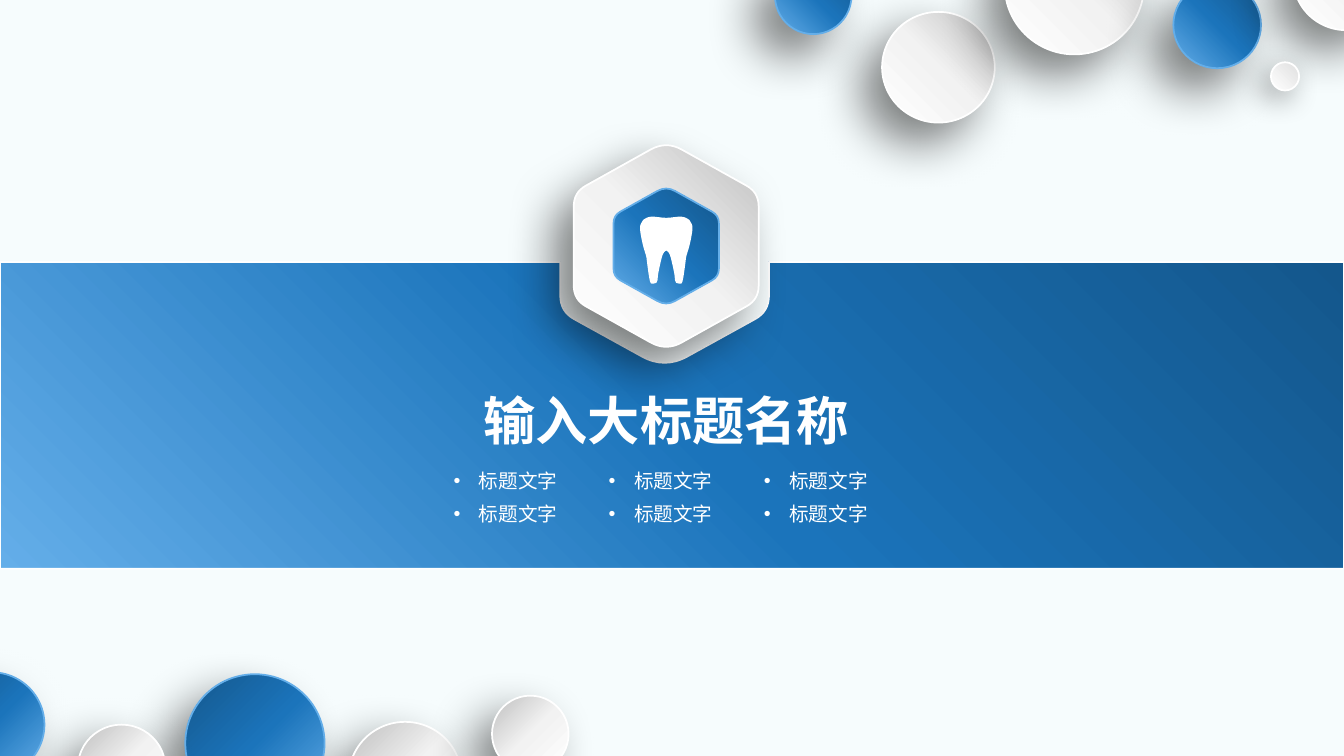
from dataclasses import dataclass
from itertools import product
from typing import Optional

from lxml import etree
from pptx import Presentation
from pptx import util as u
from pptx.dml.color import RGBColor
from pptx.enum import shapes, text
from pptx.oxml.ns import qn

WHITE = RGBColor(0xFF, 0xFF, 0xFF)
PALE = RGBColor(0xF2, 0xF2, 0xF2)
SILVER = RGBColor(0xE0, 0xE0, 0xE0)
GREY = RGBColor(0xBF, 0xBF, 0xBF)
SKY = RGBColor(0x64, 0xAE, 0xE9)
BLUE = RGBColor(0x1B, 0x74, 0xBB)
NAVY = RGBColor(0x14, 0x57, 0x8C)
AQUA = RGBColor(0x23, 0xB9, 0xD6)
BLACK = RGBColor(0, 0, 0)
FONT = "Arial"
WIDTH, HEIGHT = 33.87, 19.05
CENTRE_X, CENTRE_Y = 16.79, 6.2

Point = tuple[float, float]
Segment = list[Point]


@dataclass(frozen=True)
class Shadow:
    alpha: int
    blur: float
    dist: float


@dataclass(frozen=True)
class Style:
    stops: tuple[RGBColor, ...]
    line: RGBColor
    shadow: Optional[Shadow] = None


@dataclass(frozen=True)
class Disc:
    x: float
    y: float
    w: float
    h: float
    style: Style
    angle: int = 45


BAND = Style((SKY, BLUE, NAVY), WHITE)
BADGE = Style((SKY, BLUE, NAVY), SKY)
BLUE_DISC = Style((SKY, BLUE, NAVY), SKY, Shadow(50, 35, 22))
WHITE_DISC = Style((WHITE, PALE, GREY), WHITE, Shadow(50, 35, 20))
DOT = Style((WHITE, SILVER), WHITE, Shadow(40, 22, 8))

DISCS = [
    Disc(22.23, 0.3, 2.84, 2.79, WHITE_DISC),
    Disc(19.53, -1.07, 1.93, 1.93, BLUE_DISC),
    Disc(25.32, -2.11, 3.51, 3.48, WHITE_DISC),
    Disc(29.57, -0.46, 2.21, 2.18, BLUE_DISC),
    Disc(32.59, -1.88, 2.67, 2.64, WHITE_DISC),
    Disc(32.03, 1.57, 0.71, 0.71, DOT),
    Disc(8.79, 18.19, 2.84, 2.79, WHITE_DISC, 135),
    Disc(12.4, 17.53, 1.93, 1.93, WHITE_DISC, 135),
    Disc(4.67, 16.99, 3.51, 3.48, BLUE_DISC, 135),
    Disc(1.96, 18.26, 2.21, 2.18, WHITE_DISC, 135),
    Disc(-1.55, 16.94, 2.67, 2.64, BLUE_DISC, 135),
]

TOOTH_TOP = 5.46
TOOTH_HALF = [
    (0, 0.03), (0.38, 0), (0.58, 0.08), (0.64, 0.18), (0.66, 0.33),
    (0.59, 0.71), (0.5, 1.02), (0.48, 1.19), (0.41, 1.63), (0.33, 1.69),
    (0.25, 1.67), (0.22, 1.6), (0.2, 1.42), (0.11, 1.02), (0.05, 0.89), (0, 0.85),
]


def blend(a: Point, b: Point, t: float) -> Point:
    return a[0] + (b[0] - a[0]) * t, a[1] + (b[1] - a[1]) * t


def round_corner(a: Point, v: Point, b: Point, cut: float) -> list[Segment]:
    start, finish = (blend(v, end, cut / ((end[0] - v[0]) ** 2 + (end[1] - v[1]) ** 2) ** 0.5)
                     for end in (a, b))
    return [[start], [blend(start, v, 2 / 3), blend(finish, v, 2 / 3), finish]]


def hexagon(scale: float) -> list[Segment]:
    half = [(0, -2.65), (2.33, -1.35), (2.33, 1.35)]
    corners = [(CENTRE_X + sign * x * scale, CENTRE_Y + sign * y * scale)
               for sign in (1, -1) for x, y in half]
    return [seg for i, v in enumerate(corners)
            for seg in round_corner(corners[i - 1], v, corners[(i + 1) % 6],
                                    (0.35 if i % 3 else 0.45) * scale)]


def band() -> list[Segment]:
    top, bottom = 6.6, 14.33
    notch = [(14.12, top), (14.12, 7.85), (16.75, 9.3), (19.38, 7.85), (19.38, top)]
    curve = [seg for a, v, b, cut in zip(notch, notch[1:], notch[2:], (0.4, 0.65, 0.4))
             for seg in round_corner(a, v, b, cut)]
    return [[(0, top)], [notch[0]], *curve, [notch[-1]],
            [(WIDTH, top)], [(WIDTH, bottom)], [(0, bottom)]]


def tooth() -> list[Segment]:
    mirrored = [(-x, y) for x, y in TOOTH_HALF[-2:0:-1]]
    knots = [(CENTRE_X + x, TOOTH_TOP + y) for x, y in TOOTH_HALF + mirrored]
    segments = [[knots[0]]]
    for i in range(len(knots)):
        a, b, c, d = (knots[(i + k) % len(knots)] for k in (-1, 0, 1, 2))
        segments.append([(b[0] + (c[0] - a[0]) / 6, b[1] + (c[1] - a[1]) / 6),
                         (c[0] - (d[0] - b[0]) / 6, c[1] - (d[1] - b[1]) / 6), c])
    return segments


def outline(container, segments: list[Segment]):
    emu = [(u.Cm(x), u.Cm(y)) for seg in segments for x, y in seg]
    builder = container.build_freeform(*emu[0])
    builder.add_line_segments(emu[1:], close=True)
    sp = builder.convert_to_shape()
    lines = iter(list(sp._element.iter(qn("a:lnTo"))))
    for seg in segments[1:]:
        first, *rest = [next(lines) for _ in seg]
        if rest:
            first.tag = qn("a:cubicBezTo")
        for line in rest:
            first.append(line[0])
            line.getparent().remove(line)
    return sp


def paint(s, style: Style, angle: int = 45) -> None:
    s.fill.gradient()
    s.fill.gradient_angle = angle
    stops = s._element.spPr.find(qn("a:gradFill")).find(qn("a:gsLst"))
    for old in list(stops):
        stops.remove(old)
    for i, color in enumerate(style.stops):
        gs = etree.SubElement(stops, qn("a:gs"), pos=str(i * 100000 // (len(style.stops) - 1)))
        etree.SubElement(gs, qn("a:srgbClr"), val=str(color))
    s.line.color.rgb = style.line
    s.line.width = u.Pt(1.25)
    s.shadow.inherit = False
    if style.shadow:
        effects = s._element.spPr.find(qn("a:effectLst"))
        outer = etree.SubElement(
            effects, qn("a:outerShdw"), blurRad=str(u.Pt(style.shadow.blur)),
            dist=str(u.Pt(style.shadow.dist)), dir=str(135 * 60000),
            algn="tr", rotWithShape="0")
        color = etree.SubElement(outer, qn("a:srgbClr"), val=str(BLACK))
        etree.SubElement(color, qn("a:alpha"), val=str(style.shadow.alpha * 1000))


def paint_flat(s, color: RGBColor, alpha: int = 100) -> None:
    s.fill.solid()
    s.fill.fore_color.rgb = color
    s.line.fill.background()
    s.shadow.inherit = False
    if alpha < 100:
        clr = s._element.spPr.find(qn("a:solidFill"))[0]
        etree.SubElement(clr, qn("a:alpha"), val=str(alpha * 1000))


def format_text(tf, size: float, bold: bool = False) -> None:
    tf.word_wrap = True
    tf.auto_size = text.MSO_AUTO_SIZE.SHAPE_TO_FIT_TEXT
    font = tf.paragraphs[0].runs[0].font
    font.name, font.size, font.bold = FONT, u.Pt(size), bold
    font.color.rgb = WHITE


def add_title(s) -> None:
    title = s.shapes.title
    title.left, title.top = u.Cm(7.75), u.Cm(9.65)
    title.width, title.height = u.Cm(18.08), u.Cm(1.85)
    tf = title.text_frame
    tf.text = "输入大标题名称"
    tf.vertical_anchor = text.MSO_ANCHOR.TOP
    tf.margin_left = tf.margin_right = 0
    tf.margin_top = tf.margin_bottom = u.Cm(0.13)
    tf.paragraphs[0].alignment = text.PP_ALIGN.CENTER
    format_text(tf, 37.3, True)
    s.shapes._spTree.append(title._element)


def add_label(s, col: int, row: int) -> None:
    box = s.shapes.add_textbox(u.Cm(11.18 + 3.91 * col), u.Cm(11.68 + 0.84 * row),
                               u.Cm(4.88), u.Cm(0.86))
    tf = box.text_frame
    tf.text = "标题文字"
    pPr = tf.paragraphs[0]._p.get_or_add_pPr()
    indent = u.Cm(0.64)
    pPr.set("marL", str(indent))
    pPr.set("indent", str(-indent))
    etree.SubElement(pPr, qn("a:buFont"), typeface=FONT)
    etree.SubElement(pPr, qn("a:buChar"), char="•")
    format_text(tf, 14)


def main() -> None:
    prs = Presentation()
    prs.slide_width, prs.slide_height = u.Cm(WIDTH), u.Cm(HEIGHT)
    s = prs.slides.add_slide(prs.slide_layouts[5])

    tint = s.shapes.add_shape(shapes.MSO_SHAPE.RECTANGLE, 0, 0, prs.slide_width, prs.slide_height)
    paint_flat(tint, AQUA, 4)
    paint(outline(s.shapes, band()), BAND)
    paint(outline(s.shapes, hexagon(1)), WHITE_DISC)
    add_title(s)
    for row, col in product(range(2), range(3)):
        add_label(s, col, row)
    for d in DISCS:
        sp = s.shapes.add_shape(shapes.MSO_SHAPE.OVAL,
                                u.Cm(d.x), u.Cm(d.y), u.Cm(d.w), u.Cm(d.h))
        paint(sp, d.style, d.angle)

    icon = s.shapes.add_group_shape().shapes
    paint(outline(icon, hexagon(0.57)), BADGE)
    paint_flat(outline(icon, tooth()), WHITE)
    prs.save("out.pptx")


if __name__ == "__main__":
    main()
